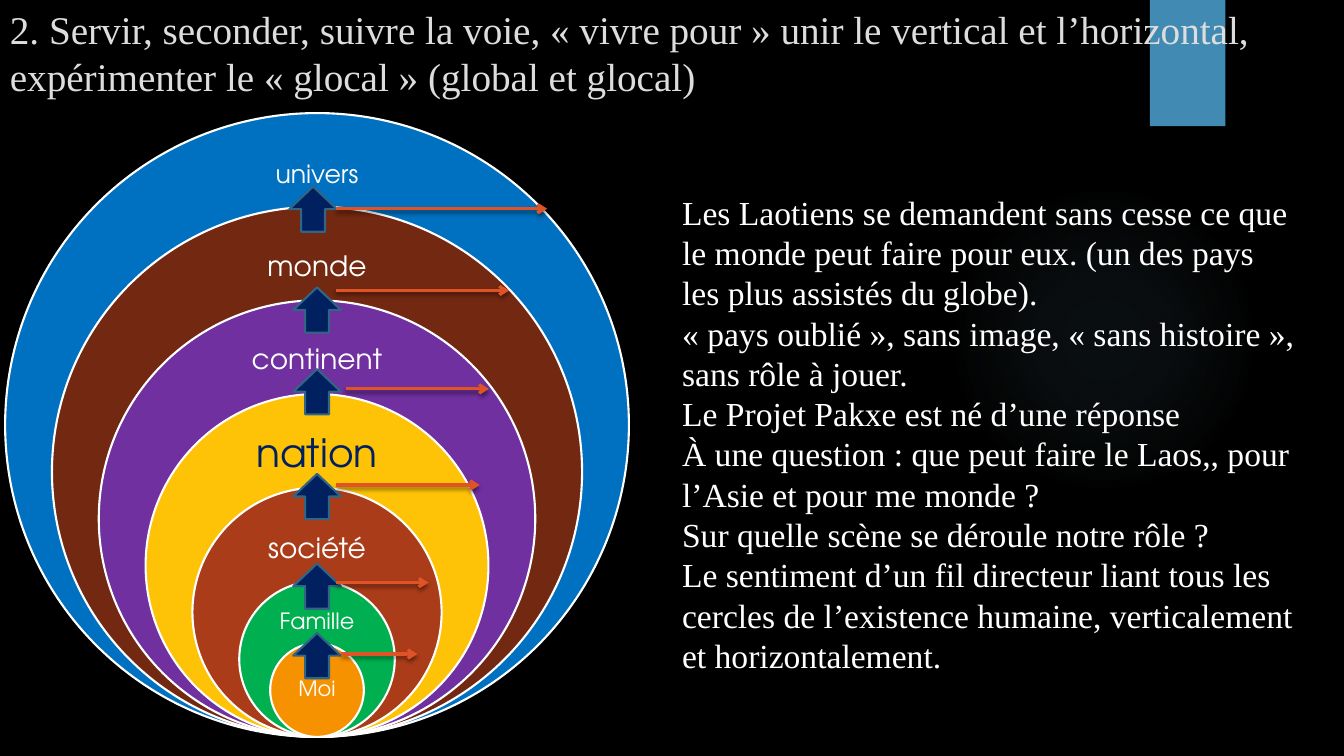
from lxml.etree import SubElement
from pptx import Presentation
from pptx.dml.color import RGBColor
from pptx.enum.shapes import MSO_CONNECTOR, MSO_SHAPE
from pptx.enum.text import MSO_ANCHOR, PP_ALIGN
from pptx.oxml.ns import qn
from pptx.util import Cm, Pt

SERIF = "Times New Roman"
SANS = "TeX Gyre Adventor"

TITLE = ("2. Servir, seconder, suivre la voie, « vivre pour » unir le vertical et "
         "l’horizontal, expérimenter le « glocal » (global et glocal)")
BODY = [
    "Les Laotiens se demandent sans cesse ce que le monde peut faire pour eux. "
    "(un des pays les plus assistés du globe).",
    "« pays oublié », sans image, « sans histoire », sans rôle à jouer.",
    "Le Projet Pakxe est né d’une réponse",
    "À une question : que peut faire le Laos,, pour l’Asie et pour me monde ?",
    "Sur quelle scène se déroule notre rôle ?",
    "Le sentiment d’un fil directeur liant tous les cercles de l’existence humaine, "
    "verticalement et horizontalement.",
]

CENTER, BOTTOM = 7.99, 18.57
OUTER, STEP = 15.72, 2.36
CIRCLES = [
    ("univers", "0070C0", 18, "FFFFFF", 4.42, 5.89),
    ("monde", "722811", 20, "FFFFFF", 6.74, 5.77),
    ("continent", "7030A0", 20, "FFFFFF", 9.09, 5.69),
    ("nation", "FEC306", 28, "002060", 11.47, 4.67),
    ("société", "AB3C19", 20, "FFFFFF", 13.84, 4.09),
    ("Famille", "00B050", 16, "FFFFFF", 15.68, 2.67),
    ("Moi", "F69200", 15, "FFFFFF", 17.37, 1.68),
]
UP_ARROWS = [(CENTER, 15.95), (CENTER, 14.2), (CENTER, 11.94),
             (CENTER, 9.3), (CENTER, 7.24), (7.89, 4.7)]
SIDE_ARROWS = [(8.59, 10.52, 16.48), (8.48, 10.8, 14.68), (8.48, 12.09, 12.22),
               (8.71, 12.32, 9.8), (8.46, 12.83, 7.32), (8.48, 13.79, 5.26)]


def color(code):
    return RGBColor.from_string(code)


class Painter:
    """Draws styled elements on the current slide, in centimetres."""

    def __init__(self, page):
        self.page = page
        self.page.background.fill.solid()
        self.page.background.fill.fore_color.rgb = color("000000")

    def shape(self, kind, left, top, width, height, fill=None, line=None):
        shape = self.page.shapes.add_shape(kind, Cm(left), Cm(top), Cm(width), Cm(height))
        shape.shadow.inherit = False
        if fill:
            shape.fill.solid()
            shape.fill.fore_color.rgb = color(fill)
        if line:
            shape.line.color.rgb = color(line)
            shape.line.width = Pt(1.5)
        else:
            shape.line.fill.background()
        return shape

    def glow(self, left, top, size, code, stops):
        shape = self.shape(MSO_SHAPE.OVAL, left, top, size, size)
        gradient = SubElement(shape.element.spPr, qn("a:gradFill"))
        shape.element.spPr.find(qn("a:prstGeom")).addnext(gradient)
        stop_list = SubElement(gradient, qn("a:gsLst"))
        for position, opacity in stops:
            stop = SubElement(stop_list, qn("a:gs"), pos=str(position * 1000))
            tint = SubElement(stop, qn("a:srgbClr"), val=code)
            SubElement(tint, qn("a:alpha"), val=str(opacity * 1000))
        focus = SubElement(gradient, qn("a:path"), path="circle")
        SubElement(focus, qn("a:fillToRect"), l="50000", t="50000", r="50000", b="50000")

    def shadow(self, properties):
        effects = properties.find(qn("a:effectLst"))
        if effects is None:
            effects = SubElement(properties, qn("a:effectLst"))
        outer = SubElement(effects, qn("a:outerShdw"), blurRad=str(Pt(3)), dist=str(Pt(2)),
                           dir="5400000", rotWithShape="0")
        tint = SubElement(outer, qn("a:srgbClr"), val="000000")
        SubElement(tint, qn("a:alpha"), val="45000")

    def arrow(self, start, end, height):
        arrow = self.page.shapes.add_connector(
            MSO_CONNECTOR.STRAIGHT, Cm(start), Cm(height), Cm(end), Cm(height))
        arrow.line.color.rgb = color("DF5327")
        arrow.line.width = Pt(2.25)
        SubElement(arrow.line._get_or_add_ln(), qn("a:tailEnd"), type="arrow")
        self.shadow(arrow._element.spPr)

    def text(self, left, top, width, height, lines, font, size, code):
        box = self.page.shapes.add_textbox(Cm(left), Cm(top), Cm(width), Cm(height))
        frame = box.text_frame
        frame.word_wrap = True
        frame.text = "\n".join(lines)
        for para in frame.paragraphs:
            para.font.name = font
            para.font.size = Pt(size)
            para.font.color.rgb = color(code)
        return frame

    def label(self, word, middle, width, size, code):
        height = 1.5
        frame = self.text(CENTER - width / 2, middle - height / 2, width, height,
                          [word], SANS, size, code)
        frame.vertical_anchor = MSO_ANCHOR.MIDDLE
        frame.margin_left = frame.margin_right = Cm(0.3)
        frame.paragraphs[0].alignment = PP_ALIGN.CENTER
        frame.paragraphs[0].line_spacing = 0.9


def main():
    deck = Presentation()
    deck.slide_width, deck.slide_height = Cm(33.87), Cm(19.05)
    painter = Painter(deck.slides.add_slide(deck.slide_layouts[6]))

    painter.glow(23.9, 4.65, 7.82, "8ABAD4", [(0, 7), (36, 6), (69, 0)])
    tab = painter.shape(MSO_SHAPE.RECTANGLE, 28.98, 0, 1.9, 3.18, "418AB3")
    painter.shadow(tab.element.spPr)
    painter.text(0, 0, 33.87, 3.89, [TITLE], SERIF, 28, "DDDDDD")

    for index, (word, fill, size, code, middle, width) in enumerate(CIRCLES):
        diameter = max(OUTER - STEP * index, STEP)
        painter.shape(MSO_SHAPE.OVAL, CENTER - diameter / 2, BOTTOM - diameter,
                      diameter, diameter, fill, "FFFFFF")
        painter.label(word, middle, width, size, code)

    painter.text(16.94, 4.7, 15.93, 12.57, BODY, SERIF, 24, "FFFFFF")

    for middle, top in UP_ARROWS:
        arrow = painter.shape(MSO_SHAPE.DOWN_ARROW, middle - 0.6, top, 1.2, 1.14,
                              "002060", "306684")
        arrow.rotation = 180
    for start, end, height in SIDE_ARROWS:
        painter.arrow(start, end, height)

    deck.save("out.pptx")


if __name__ == "__main__":
    main()
